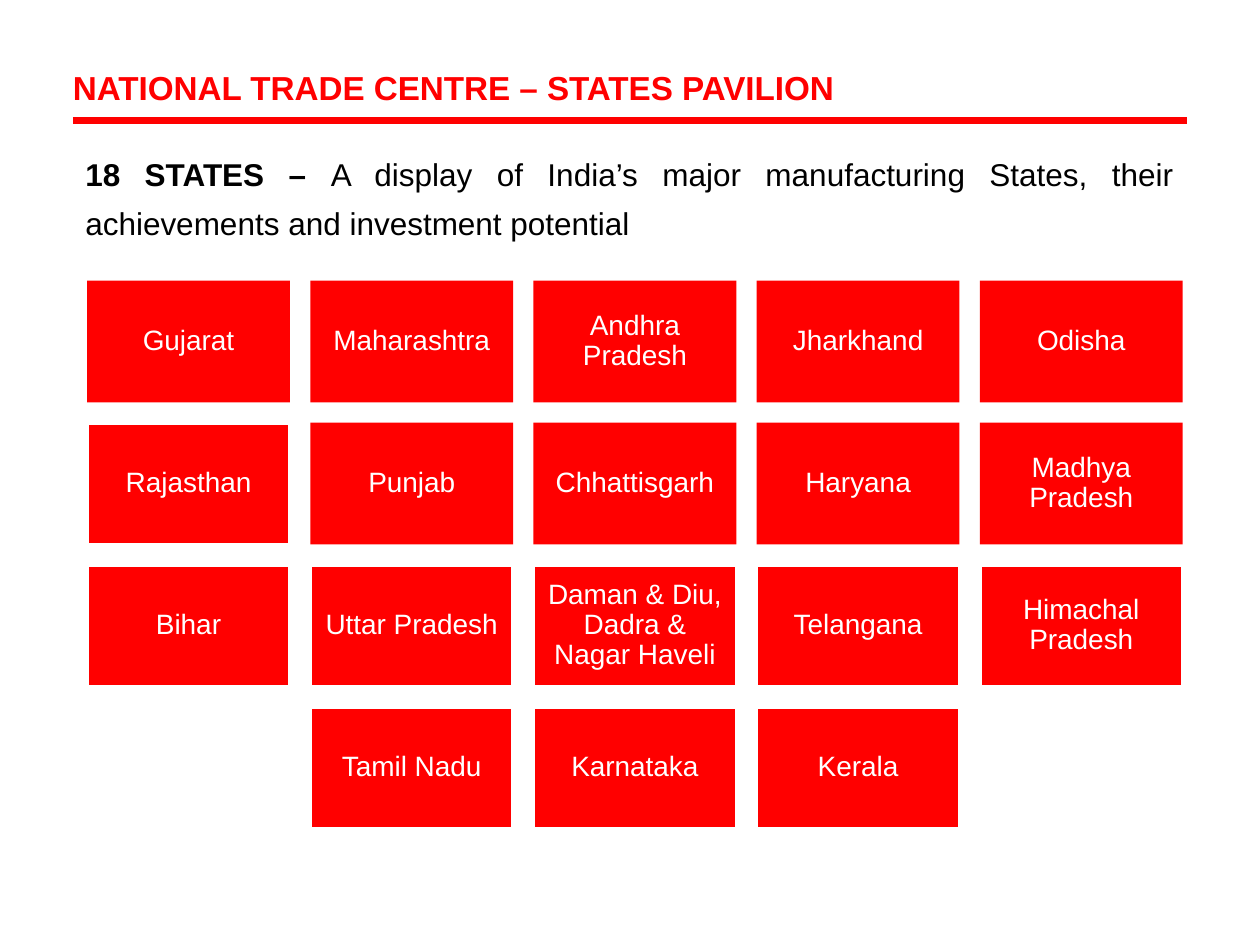
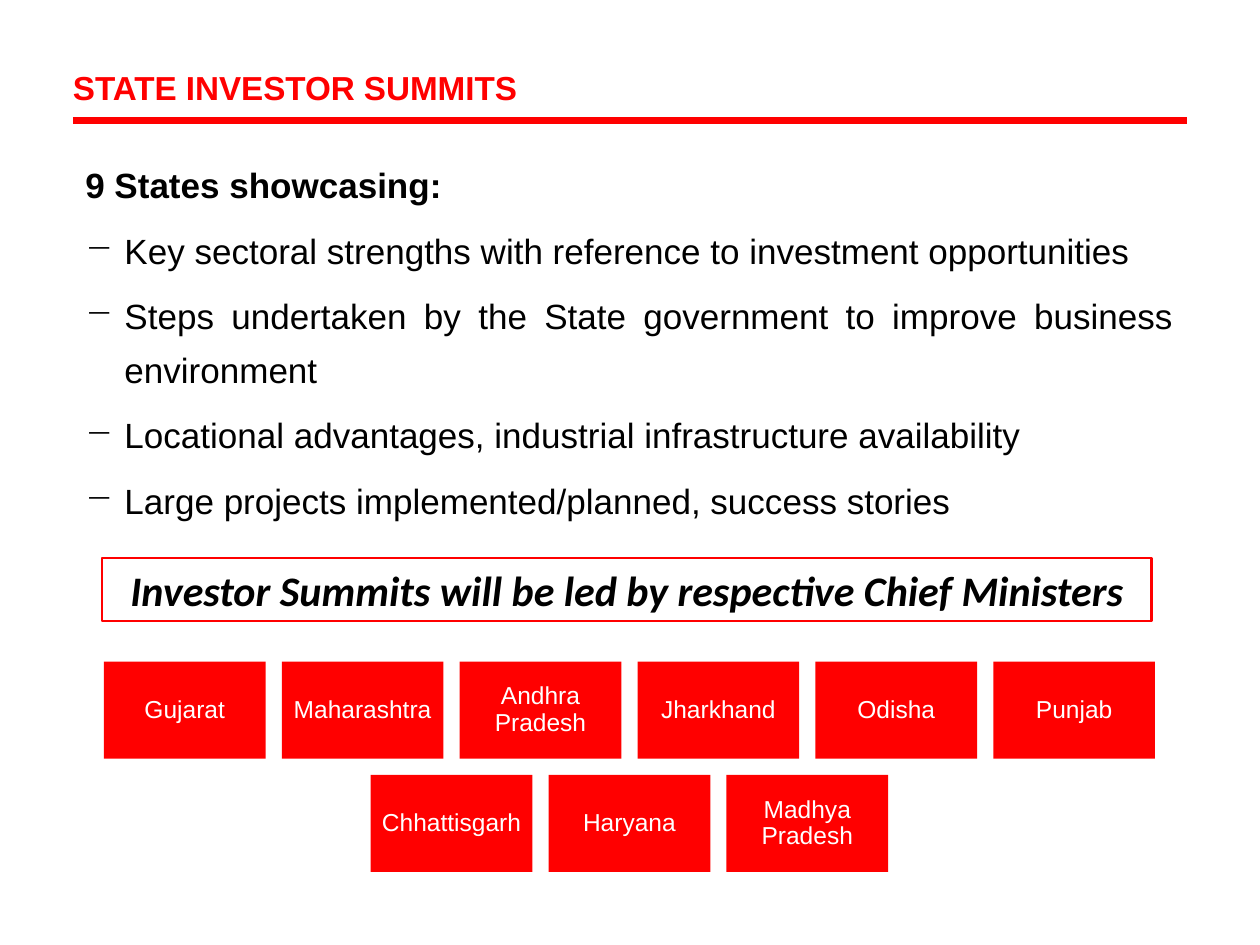
import dataclasses

import pptx
import pptx.dml.color
import pptx.enum.shapes
import pptx.enum.text
import pptx.oxml
import pptx.oxml.ns
import pptx.util
from pptx.util import Cm

ALIGN = pptx.enum.text.PP_ALIGN
ANCHOR = pptx.enum.text.MSO_ANCHOR
RECTANGLE = pptx.enum.shapes.MSO_SHAPE.RECTANGLE


@dataclasses.dataclass(frozen=True)
class Theme:
    accent: str = "FF0000"
    text: str = "000000"
    on_accent: str = "FFFFFF"
    body_font: str = "Arial"
    banner_font: str = "Calibri"
    title_size: int = 19
    intro_size: int = 18
    list_size: int = 20
    banner_size: int = 24
    rule_width: float = 4.5
    banner_line: float = 1.5
    tile_line: float = 2
    body_spacing: float = 1.3
    tile_spacing: float = 0.9


class Deck:
    """Holds the style and the slide being built."""

    def __init__(self, theme):
        self.theme = theme
        self.presentation = pptx.Presentation()
        self.presentation.slide_width = Cm(25.4)
        self.presentation.slide_height = Cm(19.05)
        self.slide = None

    # Formatting helpers
    def color(self, value):
        return pptx.dml.color.RGBColor.from_string(value)

    def add_run(self, paragraph, text, size, color, bold=False, italic=False, font=None):
        run = paragraph.add_run()
        run.text = text
        run.font.name = font or self.theme.body_font
        run.font.size = pptx.util.Pt(size)
        run.font.bold = bold
        run.font.italic = italic
        run.font.color.rgb = self.color(color)

    def set_frame(self, frame, margins, anchor=ANCHOR.TOP):
        frame.word_wrap = True
        frame.auto_size = pptx.enum.text.MSO_AUTO_SIZE.NONE
        frame.vertical_anchor = anchor
        (frame.margin_left, frame.margin_top,
         frame.margin_right, frame.margin_bottom) = map(Cm, margins)

    def set_bullet(self, paragraph, indent, symbol):
        properties = paragraph._p.get_or_add_pPr()
        properties.set("marL", str(Cm(indent)))
        properties.set("indent", str(-Cm(indent)))
        bullet = pptx.oxml.parse_xml(
            f'<a:buChar {pptx.oxml.ns.nsdecls("a")} char="{symbol}"/>')
        properties.append(bullet)

    # Slide with title and rule
    def add_slide(self, title):
        layout = self.presentation.slide_layouts.get_by_name("Title Only")
        self.slide = self.presentation.slides.add_slide(layout)
        shape = self.slide.shapes.title
        shape.left, shape.top, shape.width, shape.height = map(Cm, (1.22, 1.22, 24.13, 1.07))
        self.set_frame(shape.text_frame, (0.25, 0.13, 0.25, 0.13))
        paragraph = shape.text_frame.paragraphs[0]
        paragraph.alignment = ALIGN.LEFT
        self.add_run(paragraph, title, self.theme.title_size, self.theme.accent, bold=True)
        self.add_rule(1.47, 23.93, 2.43)

    def add_rule(self, left, right, top):
        line = self.slide.shapes.add_connector(
            pptx.enum.shapes.MSO_CONNECTOR.STRAIGHT, Cm(left), Cm(top), Cm(right), Cm(top))
        line.line.color.rgb = self.color(self.theme.accent)
        line.line.width = pptx.util.Pt(self.theme.rule_width)
        line._element.spPr.append(
            pptx.oxml.parse_xml(f'<a:effectLst {pptx.oxml.ns.nsdecls("a")}/>'))

    # Justified text
    def add_body(self, top, height, size, paragraphs, before=0, after=0):
        """Each paragraph is (bullet or None, [(text, bold), ...])."""
        box = self.slide.shapes.add_textbox(Cm(1.47), Cm(top), Cm(22.44), Cm(height))
        frame = box.text_frame
        self.set_frame(frame, (0.25, 0.13, 0.25, 0))
        for index, (bullet, runs) in enumerate(paragraphs):
            paragraph = frame.add_paragraph() if index else frame.paragraphs[0]
            paragraph.alignment = ALIGN.JUSTIFY
            paragraph.line_spacing = self.theme.body_spacing
            paragraph.space_before = pptx.util.Pt(before)
            paragraph.space_after = pptx.util.Pt(after)
            if bullet:
                self.set_bullet(paragraph, 0.79, bullet)
            for text, bold in runs:
                self.add_run(paragraph, text, size, self.theme.text, bold=bold)

    # Rectangles
    def add_rectangle(self, left, top, width, height, margins):
        shape = self.slide.shapes.add_shape(
            RECTANGLE, Cm(left), Cm(top), Cm(width), Cm(height))
        shape.shadow.inherit = False
        self.set_frame(shape.text_frame, margins, ANCHOR.MIDDLE)
        shape.text_frame.paragraphs[0].alignment = ALIGN.CENTER
        return shape

    def add_banner(self, text, left, top, width, height):
        shape = self.add_rectangle(left, top, width, height, (0.25, 0.13, 0.25, 0.13))
        shape.fill.background()
        shape.line.color.rgb = self.color(self.theme.accent)
        shape.line.width = pptx.util.Pt(self.theme.banner_line)
        self.add_run(shape.text_frame.paragraphs[0], text, self.theme.banner_size,
                     self.theme.text, True, True, self.theme.banner_font)

    def add_tile(self, text, left, top, width, height, size, margin, outlined):
        shape = self.add_rectangle(left, top, width, height, [margin] * 4)
        shape.fill.solid()
        shape.fill.fore_color.rgb = self.color(self.theme.accent)
        if outlined:
            shape.line.color.rgb = self.color(self.theme.on_accent)
            shape.line.width = pptx.util.Pt(self.theme.tile_line)
        else:
            shape.line.fill.background()
        paragraph = shape.text_frame.paragraphs[0]
        paragraph.line_spacing = self.theme.tile_spacing
        self.add_run(paragraph, text, size, self.theme.on_accent)

    def add_tiles(self, rows, center, top, width, size, margin, outlined=()):
        """Centred rows; height and gap follow from the tile width."""
        height, gap = width * 0.6, width * 0.1
        for row_index, names in enumerate(rows):
            row_width = len(names) * (width + gap) - gap
            for column, name in enumerate(names):
                self.add_tile(name, center - row_width / 2 + column * (width + gap),
                              top + row_index * (height + gap), width, height,
                              size, margin, name in outlined)


def build_pavilion(deck):
    deck.add_slide("NATIONAL TRADE CENTRE – STATES PAVILION")
    deck.add_body(2.77, 2.13, deck.theme.intro_size, [
        (None, [("18 STATES – ", True),
                ("A display of India’s major manufacturing States, their "
                 "achievements and investment potential", False)]),
    ], before=10)
    rows = [
        ["Gujarat", "Maharashtra", "Andhra Pradesh", "Jharkhand", "Odisha"],
        ["Rajasthan", "Punjab", "Chhattisgarh", "Haryana", "Madhya Pradesh"],
        ["Bihar", "Uttar Pradesh", "Daman & Diu, Dadra & Nagar Haveli",
         "Telangana", "Himachal Pradesh"],
        ["Tamil Nadu", "Karnataka", "Kerala"],
    ]
    deck.add_tiles(rows, center=12.8, top=5.66, width=4.09, size=16, margin=0.17,
                   outlined=["Rajasthan"] + rows[2] + rows[3])


def build_summits(deck):
    deck.add_slide("STATE INVESTOR SUMMITS")
    points = [
        "Key sectoral strengths with reference to investment opportunities",
        "Steps undertaken by the State government to improve business environment",
        "Locational advantages, industrial infrastructure availability",
        "Large projects implemented/planned, success stories",
    ]
    deck.add_body(2.92, 7.65, deck.theme.list_size,
                  [(None, [("9 States showcasing:", True)])]
                  + [("−", [(point, False)]) for point in points], after=6)
    deck.add_tiles([
        ["Gujarat", "Maharashtra", "Andhra Pradesh", "Jharkhand", "Odisha", "Punjab"],
        ["Chhattisgarh", "Haryana", "Madhya Pradesh"],
    ], center=12.69, top=13.34, width=3.26, size=14, margin=0.15)
    deck.add_banner("Investor Summits will be led by respective Chief Ministers",
                    2.06, 11.25, 21.16, 1.27)


def main():
    deck = Deck(Theme())
    build_pavilion(deck)
    build_summits(deck)
    deck.presentation.save("out.pptx")


if __name__ == "__main__":
    main()
